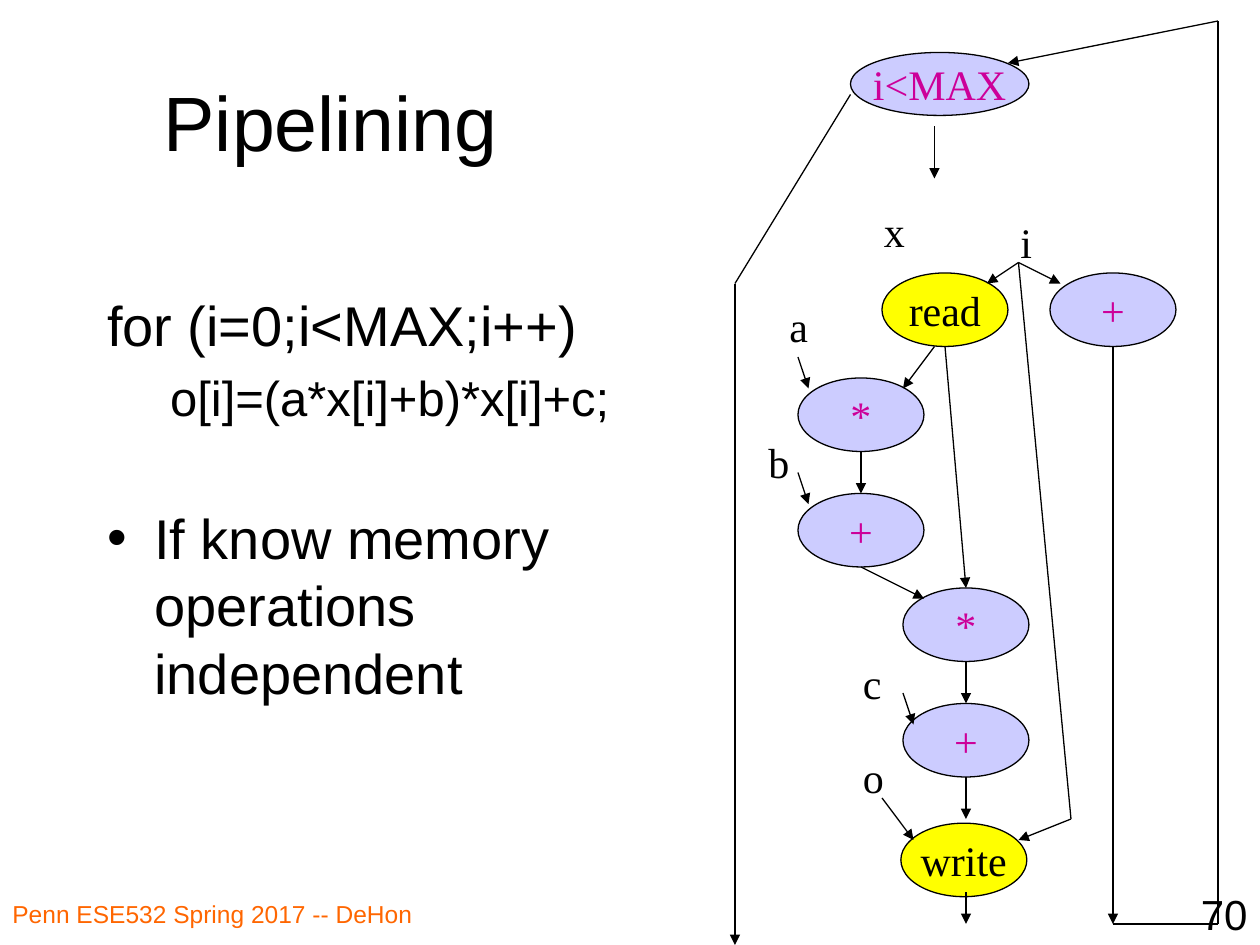
"""Build the Pipelining slide: a loop, a note on it and its dataflow graph."""
from dataclasses import dataclass
from itertools import pairwise

from lxml.etree import SubElement
from pptx import Presentation
from pptx.dml.color import RGBColor
from pptx.enum.shapes import MSO_CONNECTOR as Connector, MSO_SHAPE as Shape
from pptx.enum.text import MSO_ANCHOR as Anchor, MSO_AUTO_SIZE as AutoSize, PP_ALIGN as Align
from pptx.oxml.ns import qn
from pptx.util import Pt


@dataclass(frozen=True)
class Theme:
    sans: str = "Arial"
    serif: str = "Times New Roman"
    ink: str = "000000"
    footer: str = "FF6600"
    operator: str = "CC0099"
    compute: str = "CCCCFF"
    memory: str = "FFFF00"
    title_size: int = 44
    body_size: int = 32
    code_size: int = 28
    graph_size: int = 24
    footer_size: int = 14
    line_width: float = 0.75


THEME = Theme()
EMU_PER_PX = 7620
SLIDE = (1200, 900)

TITLE = ("Pipelining", (70, 40, 490, 150))
BODY_BOX = (90, 260, 570, 540)
BODY_TOP_MARGIN = 17
BODY = [
    dict(text="for (i=0;i<MAX;i++)", level=0, bullet=None, space=0),
    dict(text="o[i]=(a*x[i]+b)*x[i]+c;", level=1, bullet=None, space=5.6),
    dict(text="If know memory operations independent", level=0, bullet="•", space=44),
]
LEVELS = [(45, -45, THEME.body_size), (98, -38, THEME.code_size)]

FOOTER = ("Penn ESE532 Spring 2017 -- DeHon", (0, 850, 460, 50))
PAGE_NUMBER = ("70", (950, 840, 250, 60))

NODE_SIZE = (120, 70)
TEST_NODE = ("i<MAX", (810, 50, 170, 60))
COMPUTE_NODES = [("*", 760, 360), ("+", 760, 470), ("*", 860, 560),
                 ("+", 860, 670), ("+", 1000, 260)]
MEMORY_NODES = [("read", 840, 260), ("write", 858, 784)]
VARIABLES = [("a", 740, 280), ("b", 720, 410), ("c", 810, 620),
             ("o", 810, 710), ("x", 830, 190), ("i", 960, 200)]
VARIABLE_SIZE = (42, 60)

ARROW_PATHS = [
    [(820, 430), (820, 470)],
    [(820, 540), (880, 570)],
    [(920, 630), (920, 670)],
    [(920, 740), (920, 780)],
    [(920, 850), (920, 880)],
    [(890, 330), (860, 370)],
    [(900, 330), (920, 560)],
    [(760, 340), (770, 370)],
    [(760, 450), (770, 480)],
    [(860, 660), (870, 690)],
    [(840, 760), (870, 800)],
    [(970, 250), (940, 270)],
    [(970, 250), (1010, 270)],
    [(970, 250), (1020, 780), (970, 800)],
    [(890, 120), (890, 170)],
    [(1060, 330), (1060, 880)],
    [(1060, 880), (1160, 880), (1160, 20), (960, 60)],
    [(810, 90), (700, 270), (700, 900)],
]


def px(*lengths):
    return [round(length * EMU_PER_PX) for length in lengths]


def write(paragraph, text, *, size, font=THEME.sans, color=THEME.ink,
          align=Align.LEFT, space=0):
    paragraph.alignment = align
    paragraph.space_before = Pt(space)
    run = paragraph.add_run()
    run.text = text
    run.font.size = Pt(size)
    run.font.name = font
    run.font.color.rgb = RGBColor.from_string(color)


def place(placeholder, box):
    placeholder.left, placeholder.top, placeholder.width, placeholder.height = px(*box)
    placeholder.text_frame.auto_size = AutoSize.NONE
    return placeholder.text_frame


def set_bullet(paragraph, margin, indent, bullet):
    properties = paragraph._p.get_or_add_pPr()
    properties.set("marL", str(px(margin)[0]))
    properties.set("indent", str(px(indent)[0]))
    if bullet:
        SubElement(properties, qn("a:buChar")).set("char", bullet)
    else:
        SubElement(properties, qn("a:buNone"))


def add_body(slide):
    frame = place(slide.placeholders[1], BODY_BOX)
    frame.margin_top = px(BODY_TOP_MARGIN)[0]
    for index, item in enumerate(BODY):
        paragraph = frame.add_paragraph() if index else frame.paragraphs[0]
        margin, indent, size = LEVELS[item["level"]]
        paragraph.level = item["level"]
        set_bullet(paragraph, margin, indent, item["bullet"])
        write(paragraph, item["text"], size=size, space=item["space"])


def add_label(slide, text, box, **text_format):
    frame = slide.shapes.add_textbox(*px(*box)).text_frame
    frame.word_wrap = True
    write(frame.paragraphs[0], text, **text_format)


def add_node(slide, text, box, fill, color):
    node = slide.shapes.add_shape(Shape.OVAL, *px(*box))
    node.shadow.inherit = False
    node.fill.solid()
    node.fill.fore_color.rgb = RGBColor.from_string(fill)
    node.line.color.rgb = RGBColor.from_string(THEME.ink)
    node.line.width = Pt(THEME.line_width)
    node.text_frame.word_wrap = False
    node.text_frame.vertical_anchor = Anchor.MIDDLE
    write(node.text_frame.paragraphs[0], text, size=THEME.graph_size,
          font=THEME.serif, color=color, align=Align.CENTER)
    return node


def add_path(slide, points, node_tops):
    for start, end in pairwise(points):
        edge = slide.shapes.add_connector(Connector.STRAIGHT, *px(*start, *end))
        edge.line.color.rgb = RGBColor.from_string(THEME.ink)
        edge.line.width = Pt(THEME.line_width)
        SubElement(edge._element.spPr, qn("a:effectLst"))
        if end in node_tops:
            edge.end_connect(node_tops[end], 0)
    SubElement(edge.line._get_or_add_ln(), qn("a:tailEnd")).set("type", "triangle")


def add_graph(slide):
    node_tops = {}
    add_node(slide, *TEST_NODE, THEME.compute, THEME.operator)
    for nodes, fill, color in [(COMPUTE_NODES, THEME.compute, THEME.operator),
                               (MEMORY_NODES, THEME.memory, THEME.ink)]:
        for text, left, top in nodes:
            node = add_node(slide, text, (left, top, *NODE_SIZE), fill, color)
            node_tops[left + NODE_SIZE[0] // 2, top] = node
    for name, left, top in VARIABLES:
        add_label(slide, name, (left, top, *VARIABLE_SIZE),
                  size=THEME.graph_size, font=THEME.serif)
    for points in ARROW_PATHS:
        add_path(slide, points, node_tops)


def main():
    deck = Presentation()
    deck.slide_width, deck.slide_height = px(*SLIDE)
    slide = deck.slides.add_slide(deck.slide_layouts[1])
    title, title_box = TITLE
    title_frame = place(slide.shapes.title, title_box)
    title_frame.vertical_anchor = Anchor.MIDDLE
    write(title_frame.paragraphs[0], title, size=THEME.title_size, align=Align.CENTER)
    add_body(slide)
    add_label(slide, *FOOTER, size=THEME.footer_size, color=THEME.footer)
    add_label(slide, *PAGE_NUMBER, size=THEME.graph_size, align=Align.RIGHT)
    add_graph(slide)
    deck.save("out.pptx")


if __name__ == "__main__":
    main()
